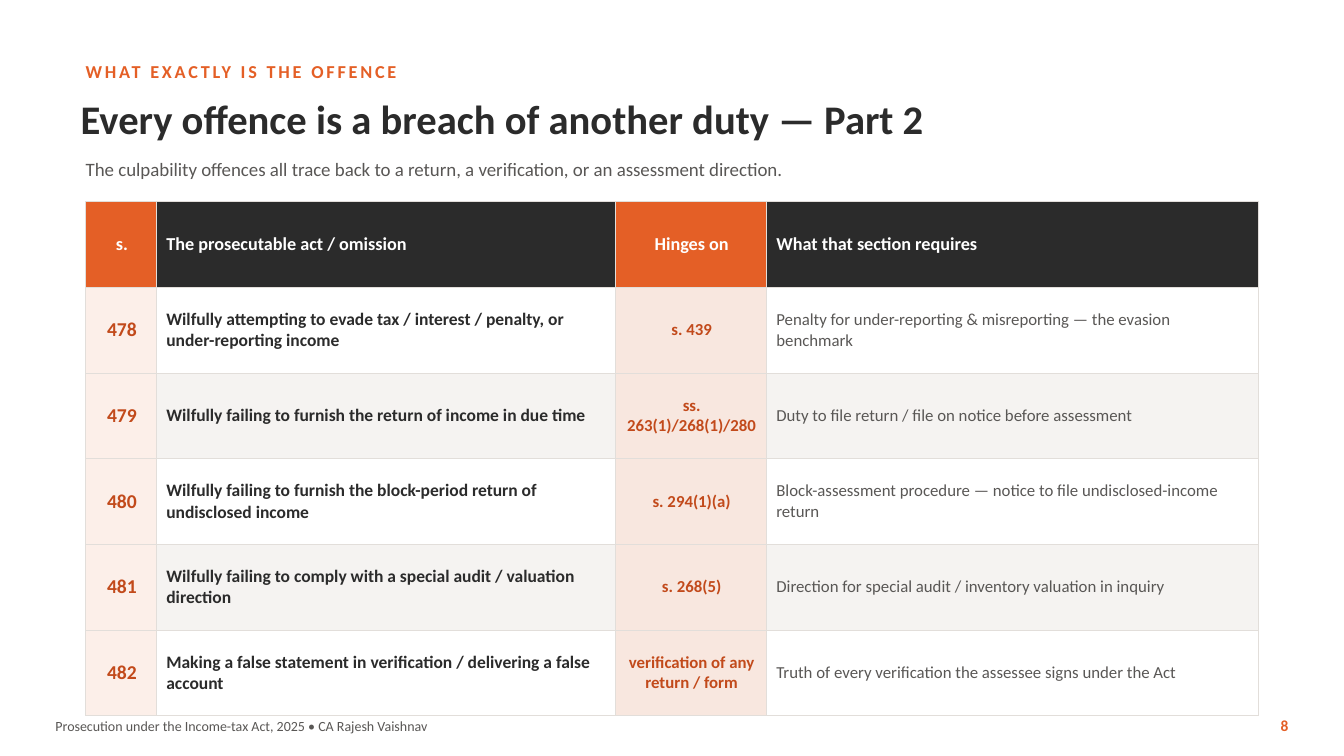
"""Build the slide that maps each culpability offence to the duty it breaches."""
from lxml.etree import SubElement
from pptx import Presentation
from pptx.dml.color import RGBColor
from pptx.enum.text import MSO_ANCHOR, MSO_AUTO_SIZE, PP_ALIGN
from pptx.oxml.ns import qn
from pptx.util import Pt

PX = 9144
THEME = {
    "font": "Calibri",
    "color": {"accent": "E45F26", "rust": "C24A1B", "ink": "2B2B2B", "grey": "595755",
              "white": "FFFFFF", "band": "F5F3F1", "blush": "FCEFE9", "peach": "F8E7DF",
              "rule": "E2DEDA"},
    "size": {"eyebrow": 13, "title": 29, "subtitle": 13.5, "header": 13, "section": 14,
             "act": 12.5, "duty": 12, "footer": 10, "page": 11},
}


def rgb(name):
    return RGBColor.from_string(THEME["color"][name])


def write(tf, text, size, color, bold=False, align=PP_ALIGN.LEFT):
    p = tf.paragraphs[0]
    p.text = text
    p.alignment = align
    p.font.name = THEME["font"]
    p.font.size = Pt(THEME["size"][size])
    p.font.bold = bold
    p.font.color.rgb = rgb(color)
    return p


prs = Presentation()
prs.slide_width, prs.slide_height = 1333 * PX, 750 * PX
s = prs.slides.add_slide(prs.slide_layouts[5])
s.background.fill.solid()
s.background.fill.fore_color.rgb = rgb("white")

texts = [
    ("title", (80, 90, 1200, 55), "Every offence is a breach of another duty — Part 2",
     "ink", True, PP_ALIGN.LEFT),
    ("eyebrow", (85, 55, 1100, 32), "WHAT EXACTLY IS THE OFFENCE",
     "accent", True, PP_ALIGN.LEFT),
    ("subtitle", (85, 148, 1170, 40),
     "The culpability offences all trace back to a return, a verification, "
     "or an assessment direction.", "grey", False, PP_ALIGN.LEFT),
    ("footer", (55, 705, 900, 30),
     "Prosecution under the Income-tax Act, 2025 • CA Rajesh Vaishnav",
     "grey", False, PP_ALIGN.LEFT),
    ("page", (1233, 705, 45, 30), "8", "accent", True, PP_ALIGN.RIGHT),
]
for role, box, text, color, bold, align in texts:
    left, top, width, height = [v * PX for v in box]
    if role == "title":
        sp = s.shapes.title
        sp.left, sp.top, sp.width, sp.height = left, top, width, height
    else:
        sp = s.shapes.add_textbox(left, top, width, height)
    tf = sp.text_frame
    tf.word_wrap = True
    tf.auto_size = MSO_AUTO_SIZE.NONE
    tf.vertical_anchor = MSO_ANCHOR.MIDDLE
    tf.margin_left = tf.margin_top = tf.margin_right = tf.margin_bottom = 0
    p = write(tf, text, role, color, bold, align)
    if role == "eyebrow":
        p.runs[0].font._element.set("spc", "200")

rows = [
    ("s.", "The prosecutable act / omission", "Hinges on", "What that section requires"),
    ("478", "Wilfully attempting to evade tax / interest / penalty, or under-reporting income",
     "s. 439", "Penalty for under-reporting & misreporting — the evasion benchmark"),
    ("479", "Wilfully failing to furnish the return of income in due time",
     "ss. 263(1)/268(1)/280", "Duty to file return / file on notice before assessment"),
    ("480", "Wilfully failing to furnish the block-period return of undisclosed income",
     "s. 294(1)(a)", "Block-assessment procedure — notice to file undisclosed-income return"),
    ("481", "Wilfully failing to comply with a special audit / valuation direction",
     "s. 268(5)", "Direction for special audit / inventory valuation in inquiry"),
    ("482", "Making a false statement in verification / delivering a false account",
     "verification of any return / form",
     "Truth of every verification the assessee signs under the Act"),
]
columns = [
    (70, "accent", "section", "rust", True, PP_ALIGN.CENTER, ("blush", "blush")),
    (455, "ink", "act", "ink", True, PP_ALIGN.LEFT, ("white", "band")),
    (150, "accent", "duty", "rust", True, PP_ALIGN.CENTER, ("peach", "peach")),
    (488, "ink", "duty", "grey", False, PP_ALIGN.LEFT, ("white", "band")),
]
row_height = 85
table_width = sum(column[0] for column in columns)
table = s.shapes.add_table(len(rows), len(columns), 85 * PX, 200 * PX,
                           table_width * PX, len(rows) * row_height * PX).table
table.horz_banding = False
for i, row in enumerate(rows):
    table.rows[i].height = row_height * PX
    for j, (width, head_fill, size, color, bold, align, fills) in enumerate(columns):
        table.columns[j].width = width * PX
        cell = table.cell(i, j)
        cell.vertical_anchor = MSO_ANCHOR.MIDDLE
        cell.margin_left, cell.margin_right = 10 * PX, 8 * PX
        cell.margin_top = cell.margin_bottom = 4 * PX
        tcPr = cell._tc.get_or_add_tcPr()
        for side in ("a:lnL", "a:lnR", "a:lnT", "a:lnB"):
            ln = SubElement(tcPr, qn(side), w=str(Pt(0.75)))
            fill = SubElement(ln, qn("a:solidFill"))
            SubElement(fill, qn("a:srgbClr"), val=THEME["color"]["rule"])
        cell.fill.solid()
        if i == 0:
            cell.fill.fore_color.rgb = rgb(head_fill)
            write(cell.text_frame, row[j], "header", "white", True, align)
        else:
            cell.fill.fore_color.rgb = rgb(fills[(i - 1) % 2])
            write(cell.text_frame, row[j], size, color, bold, align)

prs.save("out.pptx")
